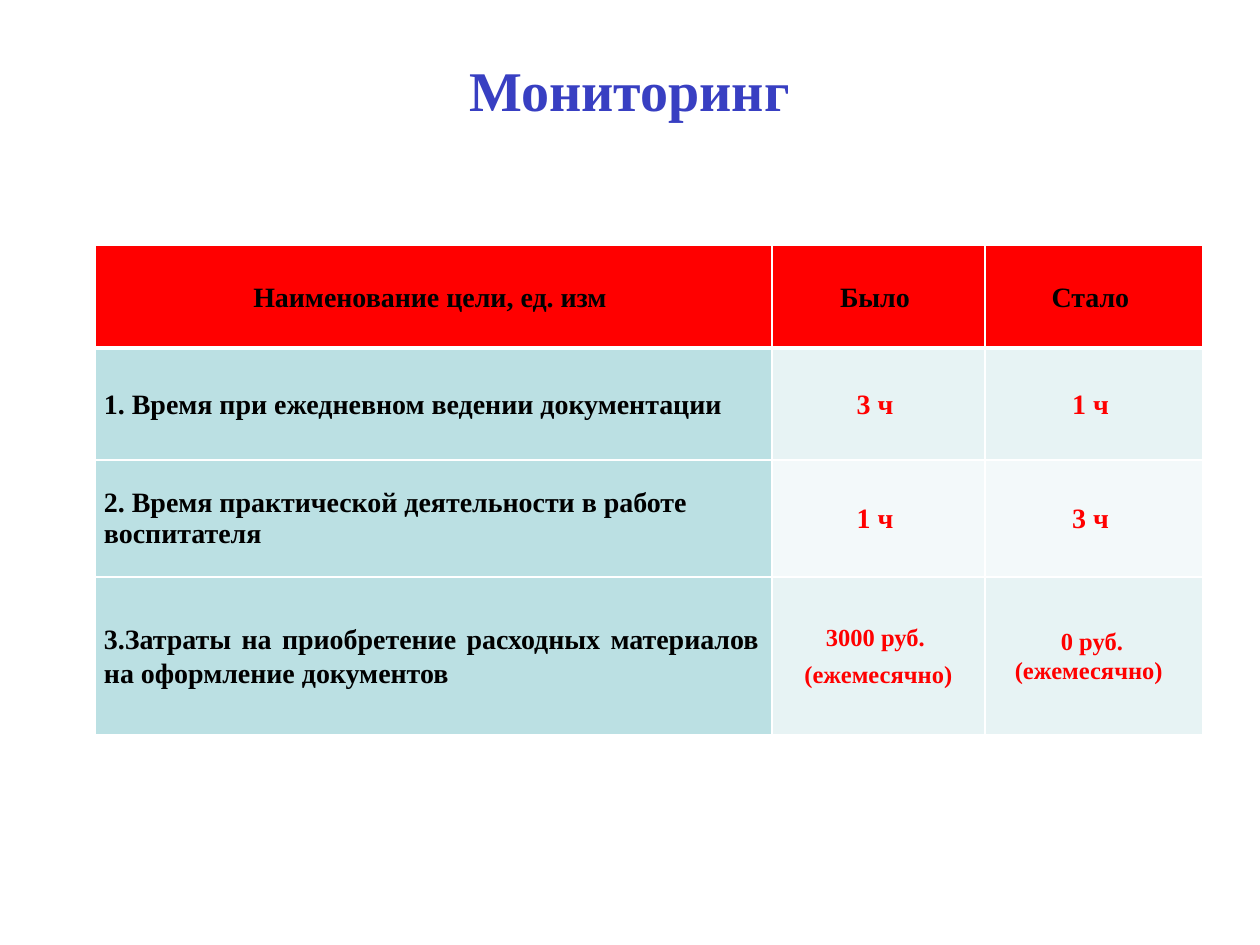
from dataclasses import dataclass

from lxml import etree
from pptx import Presentation
from pptx.dml.color import RGBColor
from pptx.enum.text import MSO_ANCHOR, PP_ALIGN
from pptx.oxml.ns import qn
from pptx.util import Emu, Pt

LEFT, MID, JUST = PP_ALIGN.LEFT, PP_ALIGN.CENTER, PP_ALIGN.JUSTIFY
CENTER, BOTTOM = MSO_ANCHOR.MIDDLE, MSO_ANCHOR.BOTTOM
SCALE = 914400 / 126


@dataclass(frozen=True)
class Theme:
    font: str = "Times New Roman"
    title: str = "383FC2"
    ink: str = "000000"
    red: str = "FF0000"
    teal: str = "BBE0E3"
    pale: str = "E7F3F4"
    light: str = "F3F9FA"
    white: str = "FFFFFF"
    big: int = 32
    body: int = 16
    small: int = 14


@dataclass(frozen=True)
class Para:
    text: str
    color: str
    size: int = Theme.body
    align: int = MID
    indent: int = 4
    line: float = 1.07
    after: float = 0


def px(n):
    return Emu(round(n * SCALE))


class Deck:
    def __init__(self, theme):
        self.theme = theme
        self.file = Presentation()
        self.file.slide_width, self.file.slide_height = px(1260), px(945)
        self.slide = self.file.slides.add_slide(self.file.slide_layouts[6])

    def text(self, frame, paras):
        for i, item in enumerate(paras):
            para = frame.add_paragraph() if i else frame.paragraphs[0]
            para.alignment = item.align
            para.line_spacing = item.line
            para.space_after = Pt(item.after)
            props = para._p.get_or_add_pPr()
            props.set("marL", str(px(item.indent)))
            props.set("indent", "0")
            run = para.add_run()
            run.text = item.text
            font = run.font
            font.name, font.size, font.bold = self.theme.font, Pt(item.size), True
            font.color.rgb = RGBColor.from_string(item.color)

    def title(self, text, x, y, w, h):
        frame = self.slide.shapes.add_textbox(px(x), px(y), px(w), px(h)).text_frame
        frame.word_wrap = False
        frame.vertical_anchor = BOTTOM
        frame.margin_bottom = px(3)
        self.text(frame, [Para(text, self.theme.title, self.theme.big,
                               indent=0, line=1)])

    def border(self, cell, side, width):
        props = cell._tc.get_or_add_tcPr()
        line = etree.SubElement(props, qn(f"a:ln{side}"), w=str(Pt(width)))
        fill = etree.SubElement(line, qn("a:solidFill"))
        etree.SubElement(fill, qn("a:srgbClr"), val=self.theme.white)

    def cell(self, cell, paras, fill, top, base):
        for side, width in zip("LRTB", (1, 1, top, base)):
            self.border(cell, side, width)
        cell.fill.solid()
        cell.fill.fore_color.rgb = RGBColor.from_string(fill)
        cell.vertical_anchor = CENTER
        cell.margin_left, cell.margin_right = px(9), px(13)
        cell.margin_top = cell.margin_bottom = 0
        self.text(cell.text_frame, paras)

    def table(self, x, y, cols, rows, cells, fills):
        """Fills hold the first-column and other-column colour of each row."""
        table = self.slide.shapes.add_table(
            len(rows), len(cols), px(x), px(y), px(sum(cols)), px(sum(rows))).table
        for col, w in zip(table.columns, cols):
            col.width = px(w)
        for row, h in zip(table.rows, rows):
            row.height = px(h)
        for r, line in enumerate(cells):
            for c, paras in enumerate(line):
                self.cell(table.cell(r, c), paras, fills[r][c > 0],
                          3 if r == 1 else 1, 3 if r == 0 else 1)


def main():
    t = Theme()
    deck = Deck(t)
    deck.title("Мониторинг", 455, 45, 349, 81)

    def head(text):
        return [Para(text, t.ink)]

    def goal(text, align=LEFT, line=1.07):
        return [Para(text, t.ink, align=align, indent=0, line=line)]

    def hours(text):
        return [Para(text, t.red)]

    def cost(text, indent=0, after=0):
        return Para(text, t.red, t.small, indent=indent, after=after)

    cells = [
        [head("Наименование цели, ед. изм "), head("Было "), head("Стало ")],
        [goal("1. Время при ежедневном ведении документации "),
         hours("3 ч "), hours("1 ч ")],
        [goal("2. Время практической деятельности в работе воспитателя ", line=1),
         hours("1 ч "), hours("3 ч ")],
        [goal("3.Затраты на приобретение расходных материалов "
              "на оформление документов ", JUST),
         [cost("3000 руб. ", 4, 4.9), cost("(ежемесячно) ", 10)],
         [cost("0 руб. (ежемесячно) ")]],
    ]
    fills = [(t.red, t.red), (t.teal, t.pale), (t.teal, t.light), (t.teal, t.pale)]
    deck.table(95, 245, (677, 213, 218), (103, 112, 117, 158), cells, fills)
    deck.file.save("out.pptx")


if __name__ == "__main__":
    main()
